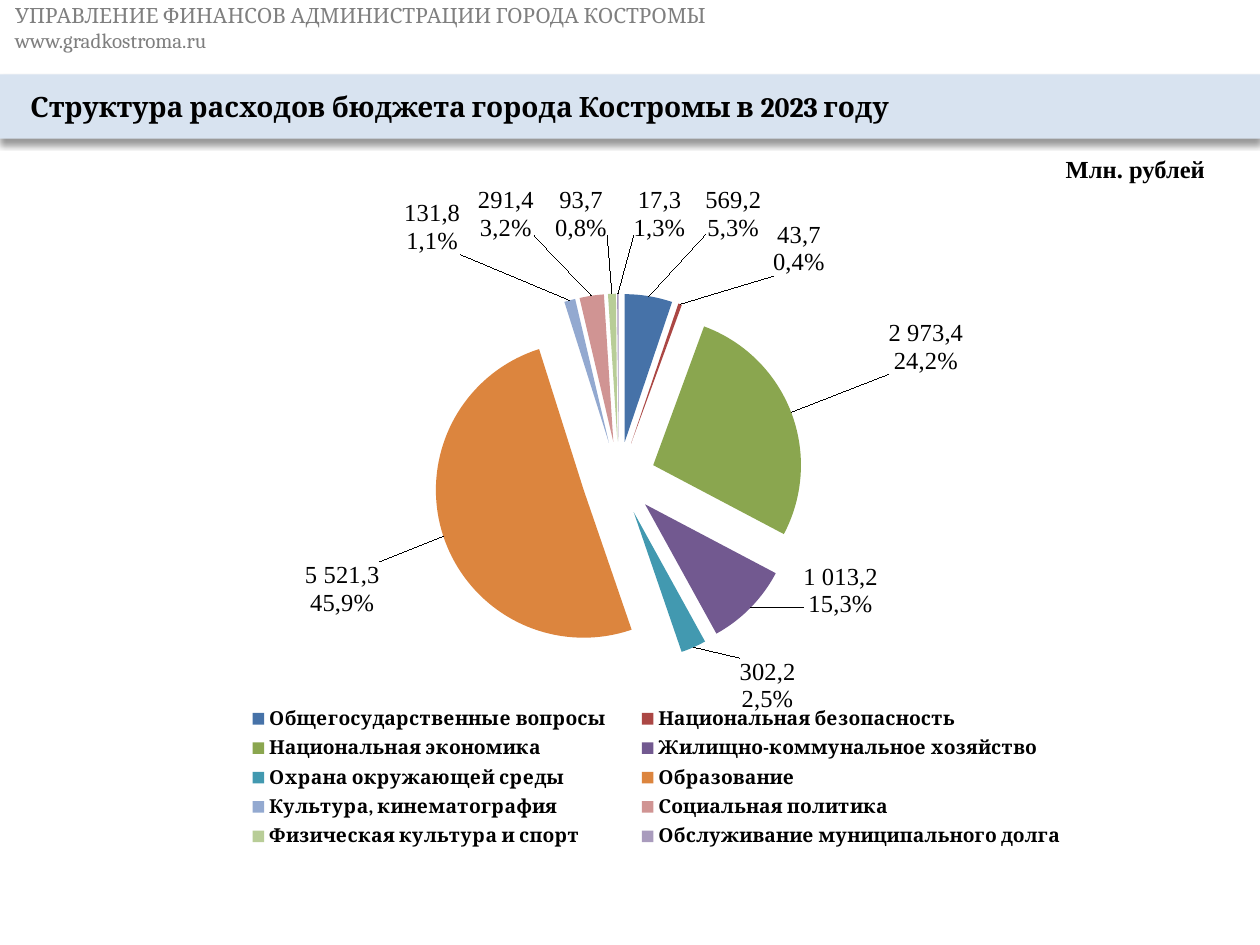
"""Build the slide with the structure of city budget spending in 2023."""
from pptx import Presentation
from pptx.chart.data import CategoryChartData
from pptx.dml.color import RGBColor
from pptx.enum.chart import XL_CHART_TYPE, XL_LABEL_POSITION, XL_LEGEND_POSITION
from pptx.enum.shapes import MSO_SHAPE
from pptx.enum.text import MSO_ANCHOR, PP_ALIGN
from pptx.oxml import parse_xml
from pptx.oxml.ns import nsdecls, qn
from pptx.util import Inches, Pt

PIE = XL_CHART_TYPE.PIE
OUTSIDE = XL_LABEL_POSITION.OUTSIDE_END
BOTTOM = XL_LEGEND_POSITION.BOTTOM
RECT = MSO_SHAPE.RECTANGLE
MIDDLE, TOP = MSO_ANCHOR.MIDDLE, MSO_ANCHOR.TOP
LEFT = PP_ALIGN.LEFT

TITLE = "Структура расходов бюджета города Костромы в 2023 году"
HEADER = "УПРАВЛЕНИЕ ФИНАНСОВ АДМИНИСТРАЦИИ ГОРОДА КОСТРОМЫ\vwww.gradkostroma.ru"
UNIT = "Млн. рублей"

# name, value, label, colour, label shift in percent of the chart
SLICES = [
    ("Общегосударственные вопросы", 569.2, "569,2\n5,3%", "4672A8", (4.9, -8)),
    ("Национальная безопасность", 43.7, "43,7\n0,4%", "AB4744", (8, -3.1)),
    ("Национальная экономика", 2973.4, "2 973,4\n24,2%", "8AA64F", (8, -5.2)),
    ("Жилищно-коммунальное хозяйство", 1013.2, "1 013,2\n15,3%", "725990", (4.2, -7.4)),
    ("Охрана окружающей среды", 302.2, "302,2\n2,5%", "4299B0", (3.8, 0.6)),
    ("Образование", 5521.3, "5 521,3\n45,9%", "DC853E", (-5, 3.4)),
    ("Культура, кинематография", 131.8, "131,8\n1,1%", "93A9D0", (-9.5, -5.7)),
    ("Социальная политика", 291.4, "291,4\n3,2%", "D09493", (-5, -7.8)),
    ("Физическая культура и спорт", 93.7, "93,7\n0,8%", "B8CD97", (-2.7, -7.5)),
    ("Обслуживание муниципального долга", 17.3, "17,3\n1,3%", "A99BBD", (3.7, -7.5)),
]
PLOT = {"x": 7.8, "y": 15.8, "w": 78.2, "h": 54.4}
LEGEND = {"x": 12, "y": 75.8, "w": 76.5, "h": 22.5}

TITLE_FONT = {"name": "Cambria", "size": Pt(16), "bold": True}
HEADER_FONT = {"name": "Cambria", "size": Pt(12), "bold": False}
UNIT_FONT = {"name": "Times New Roman", "size": Pt(14), "bold": True}
CHART_FONT = {"name": "Cambria", "size": Pt(10), "bold": False}
LEGEND_FONT = {"name": "Cambria", "size": Pt(11), "bold": True}
LABEL_FONT = {"name": "Times New Roman", "size": Pt(14), "bold": False}


def rgb(color):
    return RGBColor.from_string(color)


def style(font, values, color="000000"):
    for name, value in values.items():
        setattr(font, name, value)
    font.color.rgb = rgb(color)


def write(sp, text, font, color, anchor, inset, wrap=True):
    tf = sp.text_frame
    tf.word_wrap, tf.vertical_anchor = wrap, anchor
    tf.margin_left = tf.margin_right = Inches(inset[0])
    tf.margin_top = tf.margin_bottom = Inches(inset[1])
    p = tf.paragraphs[0]
    p.text, p.alignment = text, LEFT
    for r in p.runs:
        style(r.font, font, color)


def set_layout(parent, index, box, modes=""):
    for old in parent.findall(qn("c:layout")):
        parent.remove(old)
    items = "".join(f'<c:{k} val="{v / 100:.3f}"/>' for k, v in box.items())
    parent.insert(index, parse_xml(
        f'<c:layout {nsdecls("c")}><c:manualLayout>{modes}{items}'
        "</c:manualLayout></c:layout>"))


def add_title(s):
    sp = s.shapes.add_shape(RECT, 0, Inches(0.59), Inches(10), Inches(0.51))
    sp.fill.solid()
    sp.fill.fore_color.rgb = rgb("D8E3F0")
    sp.line.fill.background()
    sp.shadow.inherit = False
    sp._element.spPr.find(qn("a:effectLst")).append(parse_xml(
        f'<a:outerShdw {nsdecls("a")} blurRad="{Pt(4)}" dist="{Pt(3)}" '
        'dir="5400000" rotWithShape="0"><a:srgbClr val="000000">'
        '<a:alpha val="40000"/></a:srgbClr></a:outerShdw>'))
    write(sp, TITLE, TITLE_FONT, "000000", MIDDLE, (0.24, 0.12))


def add_pie(s):
    data = CategoryChartData(number_format="#,##0.0")
    data.categories = [row[0] for row in SLICES]
    data.add_series("Series 1", [row[1] for row in SLICES])
    chart = s.shapes.add_chart(PIE, Inches(0.7), Inches(1.48),
                               Inches(8.98), Inches(5.39), data).chart
    style(chart.font, CHART_FONT)
    chart.has_title = False
    chart.has_legend = True
    chart.legend.position = BOTTOM
    chart.legend.include_in_layout = False
    style(chart.legend.font, LEGEND_FONT)
    edge = '<c:xMode val="edge"/><c:yMode val="edge"/>'
    set_layout(chart.legend._element, 1, LEGEND, edge)
    plot = chart.plots[0]
    plot.vary_by_categories = True
    set_layout(plot._element.getparent(), 0, PLOT,
               '<c:layoutTarget val="inner"/>' + edge)

    series = plot.series[0]
    series._element.find(qn("c:tx")).addnext(
        parse_xml(f'<c:explosion {nsdecls("c")} val="25"/>'))
    labels = series.data_labels
    labels.show_value = True
    labels.position = OUTSIDE
    style(labels.font, LABEL_FONT)
    for i, (_, _, text, color, (dx, dy)) in enumerate(SLICES):
        point = series.points[i]
        point.format.fill.solid()
        point.format.fill.fore_color.rgb = rgb(color)
        label = point.data_label
        label.text_frame.text = text
        label.position = OUTSIDE
        for p in label.text_frame.paragraphs:
            style(p.runs[0].font, LABEL_FONT)
        set_layout(labels._element.findall(qn("c:dLbl"))[i], 1, {"x": dx, "y": dy})


def main():
    prs = Presentation()
    prs.slide_width, prs.slide_height = Inches(10), Inches(7.5)
    s = prs.slides.add_slide(prs.slide_layouts[6])
    add_title(s)
    header = s.shapes.add_textbox(0, 0, Inches(10), Inches(0.44))
    write(header, HEADER, HEADER_FONT, "7F7F7F", MIDDLE, (0.12, 0.12))
    unit = s.shapes.add_textbox(Inches(8.36), Inches(1.17), Inches(1.32), Inches(0.34))
    write(unit, UNIT, UNIT_FONT, "000000", TOP, (0.1, 0.05), False)
    add_pie(s)
    prs.save("out.pptx")


if __name__ == "__main__":
    main()
